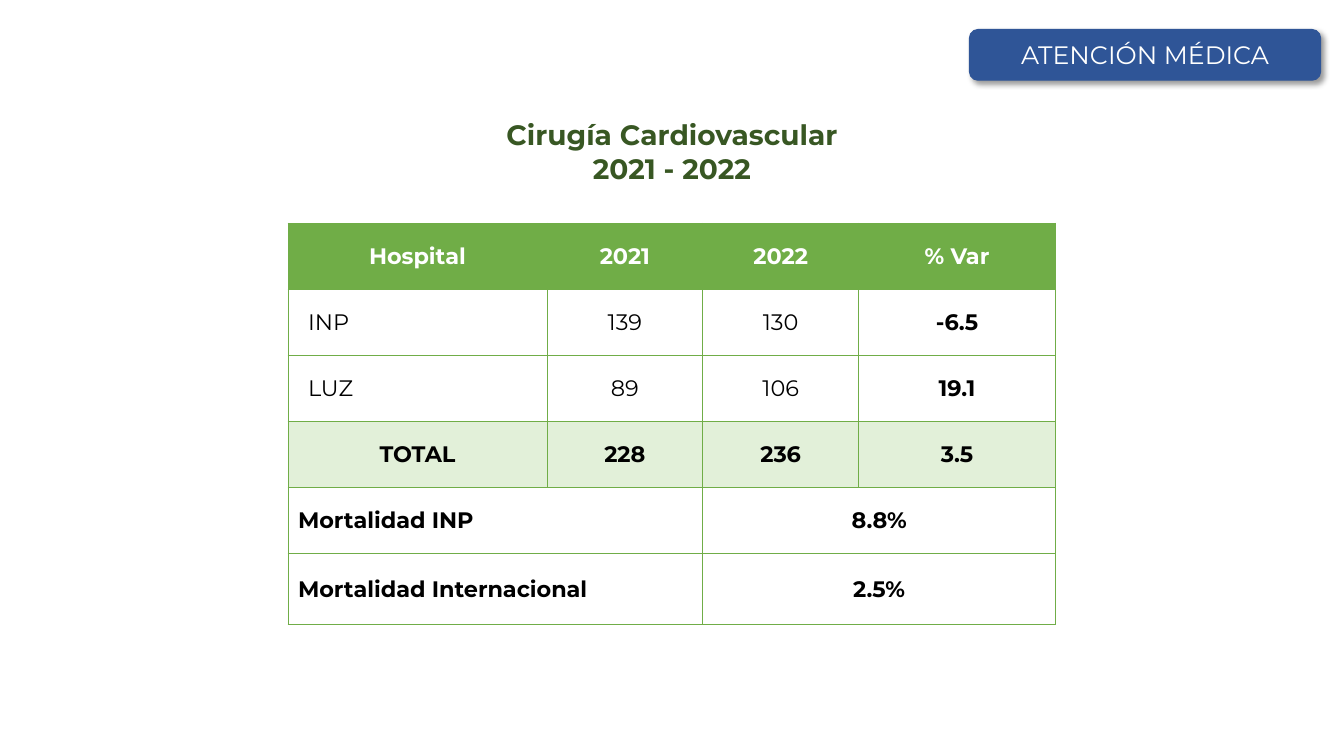
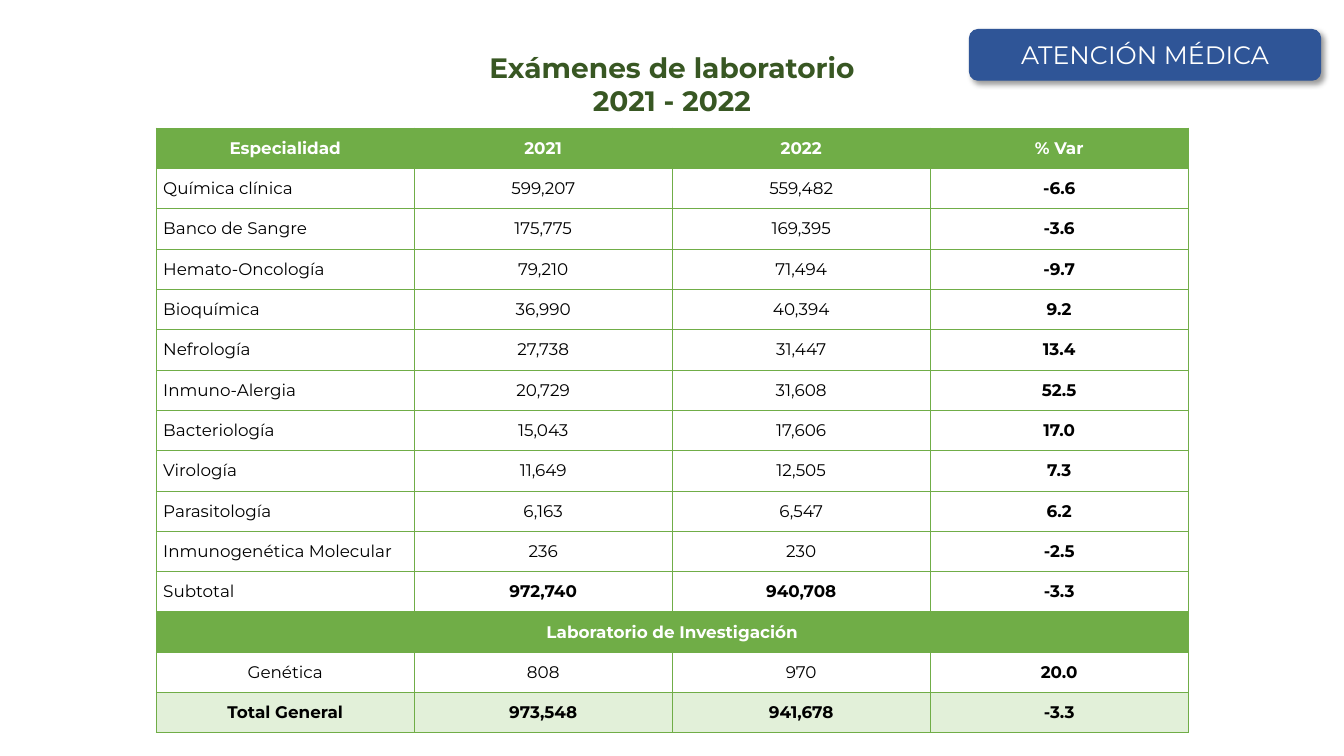
from lxml.etree import SubElement
from pptx import Presentation
from pptx.dml.color import RGBColor
from pptx.enum.shapes import MSO_SHAPE
from pptx.enum.text import MSO_ANCHOR, MSO_AUTO_SIZE, PP_ALIGN
from pptx.oxml import parse_xml
from pptx.oxml.ns import nsdecls, qn
from pptx.util import Pt

FONT = "Montserrat"
COLOURS = {
    "blue": "2F5597",
    "green": "70AD47",
    "pale green": "E2F0D9",
    "dark green": "385723",
    "white": "FFFFFF",
    "black": "000000",
}
CENTER, LEFT = PP_ALIGN.CENTER, PP_ALIGN.LEFT
SECTION = "ATENCIÓN MÉDICA"

# Row style: fill, text colour, label bold, values bold, label alignment.
# The last column is always bold.
ROW_STYLES = {
    "header": ("green", "white", True, True, CENTER),
    "body": (None, "black", False, False, LEFT),
    "centered": (None, "black", False, False, CENTER),
    "subtotal": (None, "black", False, True, LEFT),
    "total": ("pale green", "black", True, True, CENTER),
    "rate": (None, "black", True, True, LEFT),
}

# None merges a cell with the one on its left.
PAGES = [
    {
        "title": "Cirugía Cardiovascular\n2021 - 2022",
        "title_top": 80.6,
        "table_at": (205.7, 159.4),
        "columns": [185, 111.3, 111.3, 140.7],
        "heights": [47.2] * 5 + [50.8],
        "size": 16,
        "margin": 7.2,
        "body_indent": 7.2,
        "rows": [
            ("header", ["Hospital", "2021", "2022", "% Var"]),
            ("body", ["INP", "139", "130", "-6.5"]),
            ("body", ["LUZ", "89", "106", "19.1"]),
            ("total", ["TOTAL", "228", "236", "3.5"]),
            ("rate", ["Mortalidad INP", None, "8.8%", None]),
            ("rate", ["Mortalidad Internacional", None, "2.5%", None]),
        ],
    },
    {
        "title": "Exámenes de laboratorio\n2021 - 2022",
        "title_top": 32.4,
        "table_at": (111.6, 91.4),
        "columns": [184.3] * 4,
        "heights": [28.8] * 15,
        "size": 12,
        "margin": 5,
        "body_indent": 0,
        "rows": [
            ("header", ["Especialidad", "2021", "2022", "% Var"]),
            ("body", ["Química clínica", "599,207", "559,482", "-6.6"]),
            ("body", ["Banco de Sangre", "175,775", "169,395", "-3.6"]),
            ("body", ["Hemato-Oncología", "79,210", "71,494", "-9.7"]),
            ("body", ["Bioquímica", "36,990", "40,394", "9.2"]),
            ("body", ["Nefrología", "27,738", "31,447", "13.4"]),
            ("body", ["Inmuno-Alergia", "20,729", "31,608", "52.5"]),
            ("body", ["Bacteriología", "15,043", "17,606", "17.0"]),
            ("body", ["Virología", "11,649", "12,505", "7.3"]),
            ("body", ["Parasitología", "6,163", "6,547", "6.2"]),
            ("body", ["Inmunogenética Molecular", "236", "230", "-2.5"]),
            ("subtotal", ["Subtotal", "972,740", "940,708", "-3.3"]),
            ("header", ["Laboratorio de Investigación", None, None, None]),
            ("centered", ["Genética", "808", "970", "20.0"]),
            ("total", ["Total General", "973,548", "941,678", "-3.3"]),
        ],
    },
]


def rgb(name):
    return RGBColor.from_string(COLOURS[name])


def format_text(frame, size, colour, bold=False, align=CENTER):
    frame.vertical_anchor = MSO_ANCHOR.MIDDLE
    for para in frame.paragraphs:
        para.alignment = align
        for span in para.runs:
            span.font.name = FONT
            span.font.size = Pt(size)
            span.font.bold = bold
            span.font.color.rgb = rgb(colour)


def add_title(page, text, top):
    title = page.shapes.title
    title.left, title.top, title.width, title.height = Pt(240), Pt(top), Pt(480), Pt(55)
    title.text_frame.text = text
    title.text_frame.auto_size = MSO_AUTO_SIZE.NONE
    format_text(title.text_frame, 20, "dark green", bold=True)


def add_badge(page):
    """Draw the section label at the top right, with its soft shadow."""
    badge = page.shapes.add_shape(
        MSO_SHAPE.ROUNDED_RECTANGLE, Pt(692.6), Pt(21.2), Pt(250.6), Pt(36))
    badge.fill.solid()
    badge.fill.fore_color.rgb = rgb("blue")
    badge.line.color.rgb = rgb("blue")
    badge.line.width = Pt(1)
    badge.shadow.inherit = False
    effects = badge.element.spPr.find(qn("a:effectLst"))
    effects.append(parse_xml(
        f'<a:outerShdw {nsdecls("a")} blurRad="{Pt(4)}" dist="{Pt(3)}" '
        f'dir="2700000" algn="tl" rotWithShape="0">'
        f'<a:srgbClr val="{COLOURS["black"]}"><a:alpha val="40000"/></a:srgbClr>'
        f'</a:outerShdw>'))
    badge.text_frame.text = SECTION
    format_text(badge.text_frame, 18, "white")


def add_borders(cell):
    properties = cell._tc.get_or_add_tcPr()
    for side in ("lnL", "lnR", "lnT", "lnB"):
        line = SubElement(properties, qn(f"a:{side}"), w=str(Pt(0.5)))
        fill = SubElement(line, qn("a:solidFill"))
        SubElement(fill, qn("a:srgbClr"), val=COLOURS["green"])


def style_cell(cell, style, column, last, layout):
    fill, colour, label_bold, value_bold, label_align = ROW_STYLES[style]
    is_label = column == 0
    indent = layout["body_indent"] if is_label and style == "body" else 0
    cell.margin_left = Pt(layout["margin"] + indent)
    cell.margin_right = Pt(layout["margin"])
    cell.margin_top = cell.margin_bottom = Pt(3.6)
    cell.vertical_anchor = MSO_ANCHOR.MIDDLE
    add_borders(cell)
    if fill:
        cell.fill.solid()
        cell.fill.fore_color.rgb = rgb(fill)
    else:
        cell.fill.background()
    bold = label_bold if is_label else value_bold or column == last
    format_text(cell.text_frame, layout["size"], colour, bold,
                label_align if is_label else CENTER)


def add_data_table(page, layout):
    rows, columns, heights = layout["rows"], layout["columns"], layout["heights"]
    left, top = layout["table_at"]
    table = page.shapes.add_table(
        len(rows), len(columns), Pt(left), Pt(top),
        Pt(sum(columns)), Pt(sum(heights))).table
    table.horz_banding = table.first_row = False
    for column, width in zip(table.columns, columns):
        column.width = Pt(width)
    for row, height in zip(table.rows, heights):
        row.height = Pt(height)
    last = len(columns) - 1
    for row, (style, texts) in enumerate(rows):
        for column, text in enumerate(texts):
            cell = table.cell(row, column)
            cell.text_frame.text = text or ""
            style_cell(cell, style, column, last, layout)
        starts = [column for column, text in enumerate(texts) if text is not None]
        for start, following in zip(starts, starts[1:] + [len(texts)]):
            if following - start > 1:
                table.cell(row, start).merge(table.cell(row, following - 1))


def main():
    deck = Presentation()
    deck.slide_width, deck.slide_height = Pt(960), Pt(540)
    for layout in PAGES:
        page = deck.slides.add_slide(deck.slide_layouts.get_by_name("Title Only"))
        add_title(page, layout["title"], layout["title_top"])
        add_data_table(page, layout)
        add_badge(page)
    deck.save("out.pptx")


if __name__ == "__main__":
    main()
